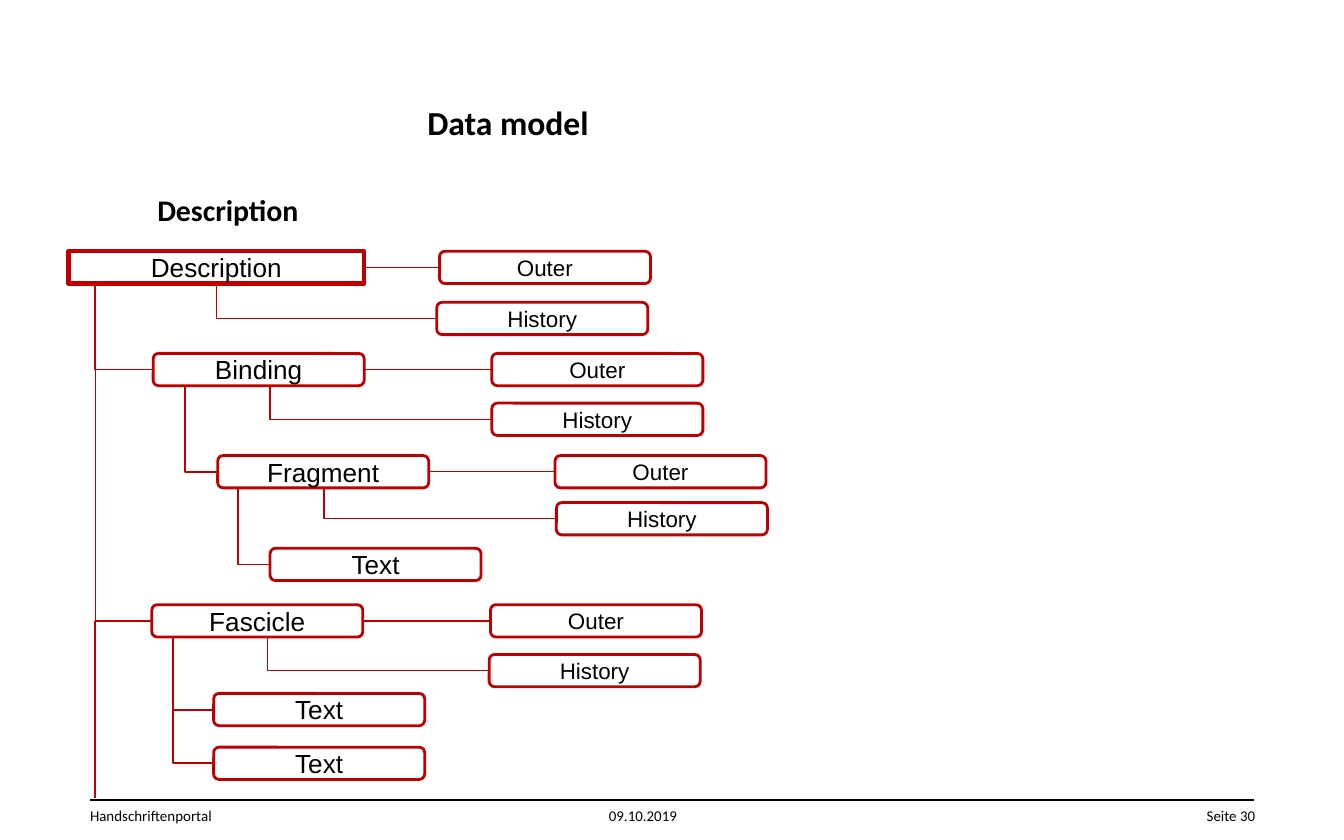
from lxml.etree import SubElement
from pptx import Presentation
from pptx.dml.color import RGBColor
from pptx.enum.shapes import MSO_CONNECTOR, MSO_SHAPE
from pptx.enum.text import MSO_ANCHOR, PP_ALIGN
from pptx.oxml.ns import qn
from pptx.util import Inches, Pt

theme = {
    "red": RGBColor(0xC0, 0x00, 0x00),
    "black": RGBColor(0x00, 0x00, 0x00),
    "white": RGBColor(0xFF, 0xFF, 0xFF),
    "heading_font": "Calibri",
    "box_font": "Arial",
    "title": Pt(18),
    "subtitle": Pt(16),
    "part": Pt(14),
    "detail": Pt(12),
    "footer": Pt(8),
}
BOX_WIDTH, BOX_HEIGHT = 1.57, 0.24

presentation = Presentation()
presentation.slide_width = Inches(10)
presentation.slide_height = Inches(6.25)
slide = presentation.slides.add_slide(presentation.slide_layouts[1])


def write(shape, text, size, font, align, bold=False):
    shape.text_frame.text = text
    paragraph = shape.text_frame.paragraphs[0]
    paragraph.alignment = align
    for run in paragraph.runs:
        run.font.size = size
        run.font.name = font
        run.font.bold = bold
        run.font.color.rgb = theme["black"]
    return paragraph


def connect(start, end, color, width, elbow=False):
    """Join two points; an elbow runs down first, then right."""
    (x1, y1), (x2, y2) = start, end
    if elbow:
        # The box is stored unrotated, so its sides are swapped about the centre
        across, down = x2 - x1, y2 - y1
        middle_x, middle_y = (x1 + x2) / 2, (y1 + y2) / 2
        x1, x2 = middle_x - down / 2, middle_x + down / 2
        y1, y2 = middle_y - across / 2, middle_y + across / 2
    kind = MSO_CONNECTOR.ELBOW if elbow else MSO_CONNECTOR.STRAIGHT
    connector = slide.shapes.add_connector(kind, Inches(x1), Inches(y1), Inches(x2), Inches(y2))
    properties = connector.element.spPr
    if elbow:
        properties.find(qn("a:prstGeom")).set("prst", "bentConnector2")
        transform = properties.find(qn("a:xfrm"))
        transform.set("rot", str(270 * 60000))
        transform.set("flipH", "1")
    connector.line.color.rgb = color
    connector.line.width = Pt(width)
    SubElement(properties, qn("a:effectLst"))
    return connector


# Footer
for text, left, width, align in [
    ("09.10.2019", 4.53, 1.42, PP_ALIGN.LEFT),
    ("Handschriftenportal", 0.67, 3.47, PP_ALIGN.LEFT),
    ("Seite 30", 8.39, 0.95, PP_ALIGN.RIGHT),
]:
    footer = slide.shapes.add_textbox(Inches(left), Inches(5.95), Inches(width), Inches(0.2))
    footer.text_frame.word_wrap = True
    footer.text_frame.margin_left = footer.text_frame.margin_right = 0
    write(footer, text, theme["footer"], theme["heading_font"], align)
connect((0.67, 5.95), (9.33, 5.95), theme["black"], 1)

# Title and subtitle
title, body = slide.shapes.title, slide.placeholders[1]
for placeholder, top, width, height in [(title, 0.76, 6.22, 0.39), (body, 1.39, 8.66, 4.36)]:
    placeholder.left, placeholder.top = Inches(0.67), Inches(top)
    placeholder.width, placeholder.height = Inches(width), Inches(height)
    frame = placeholder.text_frame
    frame.margin_left = frame.margin_right = frame.margin_top = frame.margin_bottom = 0
    frame.vertical_anchor = MSO_ANCHOR.TOP
write(title, "Data model", theme["title"], theme["heading_font"], PP_ALIGN.CENTER, True)
subtitle = write(body, "\tDescription", theme["subtitle"], theme["heading_font"], PP_ALIGN.LEFT, True)
subtitle.line_spacing = 1.14
subtitle.space_before = Pt(0)
subtitle_properties = subtitle._p.get_or_add_pPr()
subtitle_properties.set("marL", "0")
subtitle_properties.set("indent", "0")
SubElement(subtitle_properties, qn("a:buNone"))
tabs = SubElement(subtitle_properties, qn("a:tabLst"))
SubElement(tabs, qn("a:tab"), pos=str(Inches(1)), algn="l")

# Boxes: key, text, left, top
boxes = {}
for key, text, left, top in [
    ("description", "Description", 0.51, 1.87),
    ("description outer", "Outer", 3.27, 1.87),
    ("description history", "History", 3.25, 2.25),
    ("binding", "Binding", 1.14, 2.63),
    ("binding outer", "Outer", 3.66, 2.63),
    ("binding history", "History", 3.66, 3),
    ("fragment", "Fragment", 1.62, 3.39),
    ("fragment outer", "Outer", 4.13, 3.39),
    ("fragment history", "History", 4.14, 3.74),
    ("fragment text", "Text", 2.01, 4.08),
    ("fascicle", "Fascicle", 1.13, 4.5),
    ("fascicle outer", "Outer", 3.65, 4.5),
    ("fascicle history", "History", 3.64, 4.87),
    ("first text", "Text", 1.59, 5.16),
    ("second text", "Text", 1.59, 5.56),
]:
    is_root = key == "description"
    kind = MSO_SHAPE.RECTANGLE if is_root else MSO_SHAPE.ROUNDED_RECTANGLE
    width = 2.2 if is_root else BOX_WIDTH
    box = slide.shapes.add_shape(kind, Inches(left), Inches(top), Inches(width), Inches(BOX_HEIGHT))
    box.shadow.inherit = False
    box.fill.solid()
    box.fill.fore_color.rgb = theme["white"]
    box.line.color.rgb = theme["red"]
    box.line.width = Pt(2.25 if is_root else 1.5)
    box.text_frame.word_wrap = False
    box.text_frame.vertical_anchor = MSO_ANCHOR.MIDDLE
    size = theme["detail" if text in ("Outer", "History") else "part"]
    write(box, text, size, theme["box_font"], PP_ALIGN.CENTER)
    boxes[key] = box

# Straight links from each part to its outer details
for part in ("description", "binding", "fragment", "fascicle"):
    link = connect((0, 0), (1, 1), theme["red"], 0.75)
    link.begin_connect(boxes[part], 3)
    link.end_connect(boxes[part + " outer"], 1)

# Elbows: parent, child, x of the stem, line width
for parent, child, stem, width in [
    ("description", "description history", 1.61, 0.75),
    ("binding", "binding history", 2.01, 0.75),
    ("fragment", "fragment history", 2.41, 0.75),
    ("fascicle", "fascicle history", 1.99, 0.75),
    ("description", "binding", 0.71, 1),
    ("description", "fascicle", 0.71, 1),
    ("binding", "fragment", 1.38, 1),
    ("fragment", "fragment text", 1.77, 1),
    ("fascicle", "first text", 1.29, 1),
    ("fascicle", "second text", 1.29, 1),
]:
    start = (stem, boxes[parent].top.inches + BOX_HEIGHT)
    end = (boxes[child].left.inches, boxes[child].top.inches + BOX_HEIGHT / 2)
    connect(start, end, theme["red"], width, elbow=True)

# The main stem runs on to the footer line
connect((0.71, 4.62), (0.71, 5.94), theme["red"], 1)

presentation.save("out.pptx")
